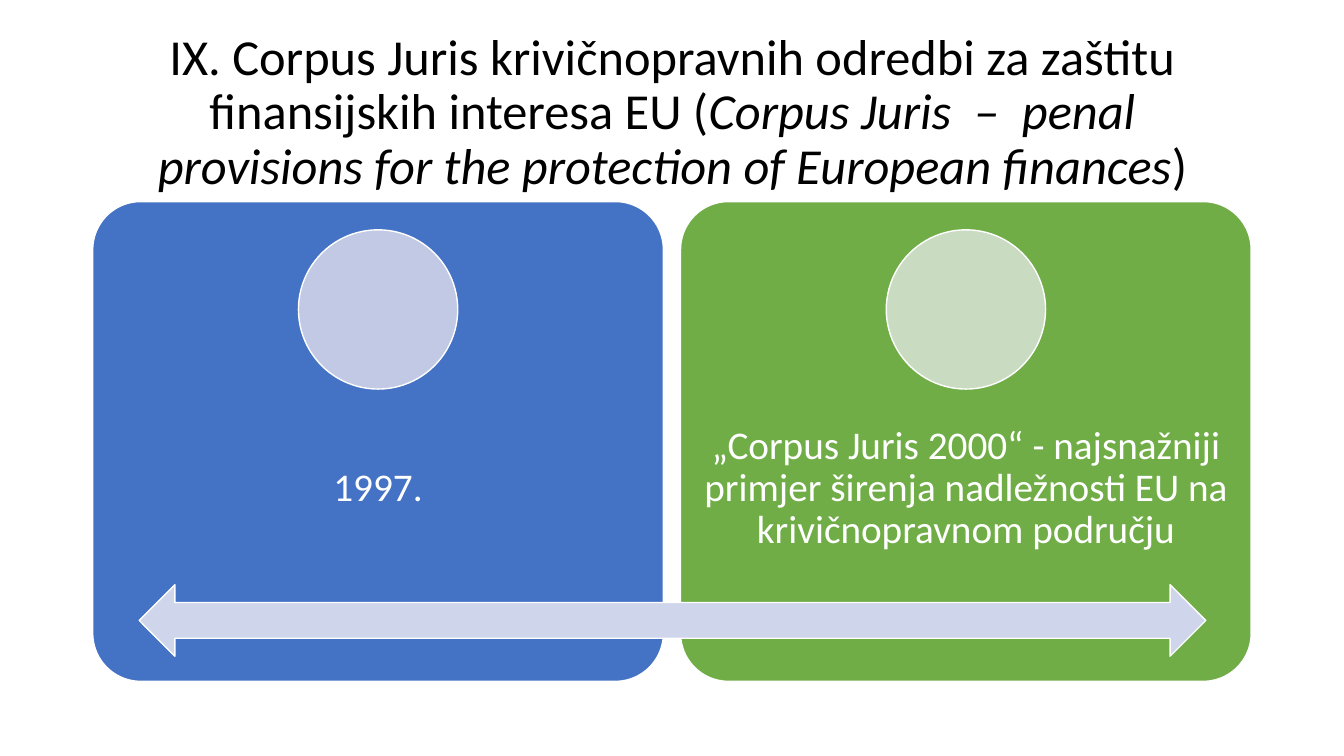
"""Builds the Corpus Juris slide with two linked panels."""
from pptx import Presentation
from pptx.dml.color import RGBColor
from pptx.enum.shapes import MSO_SHAPE
from pptx.enum.text import MSO_ANCHOR, MSO_AUTO_SIZE, PP_ALIGN
from pptx.util import Pt

PX = 9144
FONT = "Calibri"
ROUNDED, OVAL = MSO_SHAPE.ROUNDED_RECTANGLE, MSO_SHAPE.OVAL
DOUBLE_ARROW = MSO_SHAPE.LEFT_RIGHT_ARROW
MIDDLE, CENTER, NO_FIT = MSO_ANCHOR.MIDDLE, PP_ALIGN.CENTER, MSO_AUTO_SIZE.NONE
COLORS = {
    "black": "000000",
    "white": "FFFFFF",
    "blue": "4472C4",
    "pale_blue": "C1C9E4",
    "green": "70AD47",
    "pale_green": "C9DBC1",
    "arrow": "CFD5EA",
}
TITLE = [
    ("IX. Corpus Juris krivičnopravnih odredbi za zaštitu finansijskih interesa EU (", False),
    ("Corpus Juris  –  penal provisions for the protection of European finances", True),
    (")", False),
]
PANELS = [
    ("1997.", "blue", "pale_blue"),
    ("„Corpus Juris 2000“ - najsnažniji primjer širenja nadležnosti EU na "
     "krivičnopravnom području", "green", "pale_green"),
]
LEFT, TOP, PANEL_W, PANEL_H, PITCH = 92, 200, 566, 476, 583
CIRCLE = 158


def px(*values):
    """Turn pixel lengths into EMU."""
    return [v * PX for v in values]


def rgb(name):
    """Look up a colour by name."""
    return RGBColor.from_string(COLORS[name])


def write(tf, runs, size, color):
    """Write one centred paragraph of (text, italic) runs."""
    tf.word_wrap = True
    tf.auto_size = NO_FIT
    tf.vertical_anchor = MIDDLE
    p = tf.paragraphs[0]
    p.alignment = CENTER
    p.line_spacing = 0.9
    for text, italic in runs:
        r = p.add_run()
        r.text = text
        r.font.name = FONT
        r.font.size = Pt(size)
        r.font.italic = italic
        r.font.color.rgb = rgb(color)


def add_title(s):
    """Place and fill the title placeholder."""
    sp = s.shapes.title
    sp.left, sp.top, sp.width, sp.height = px(92, 40, 1150, 145)
    write(sp.text_frame, TITLE, 36, "black")


def add_filled(s, kind, box, fill):
    """Add a filled shape with a thin white outline."""
    sp = s.shapes.add_shape(kind, *px(*box))
    sp.shadow.inherit = False
    sp.fill.solid()
    sp.fill.fore_color.rgb = rgb(fill)
    sp.line.color.rgb = rgb("white")
    sp.line.width = Pt(1)
    return sp


def add_label(s, box, text):
    """Add a white caption in a text box."""
    tf = s.shapes.add_textbox(*px(*box)).text_frame
    tf.margin_left = tf.margin_right = tf.margin_top = tf.margin_bottom = 22 * PX
    write(tf, [(text, False)], 28, "white")


def add_panel(s, left, text, fill, circle_fill):
    """Add a rounded panel with its caption and circle."""
    panel = add_filled(s, ROUNDED, (left, TOP, PANEL_W, PANEL_H), fill)
    panel.adjustments[0] = 0.1
    add_label(s, (left, 390, PANEL_W, 190), text)
    circle_left = left + (PANEL_W - CIRCLE) // 2
    add_filled(s, OVAL, (circle_left, TOP + 28, CIRCLE, CIRCLE), circle_fill)


def main():
    """Build and save the slide."""
    prs = Presentation()
    prs.slide_width, prs.slide_height = px(1333, 750)
    s = prs.slides.add_slide(prs.slide_layouts[5])
    add_title(s)
    for i, (text, fill, circle_fill) in enumerate(PANELS):
        add_panel(s, LEFT + i * PITCH, text, fill, circle_fill)
    add_filled(s, DOUBLE_ARROW, (138, 580, 1058, 71), "arrow")
    prs.save("out.pptx")


if __name__ == "__main__":
    main()
